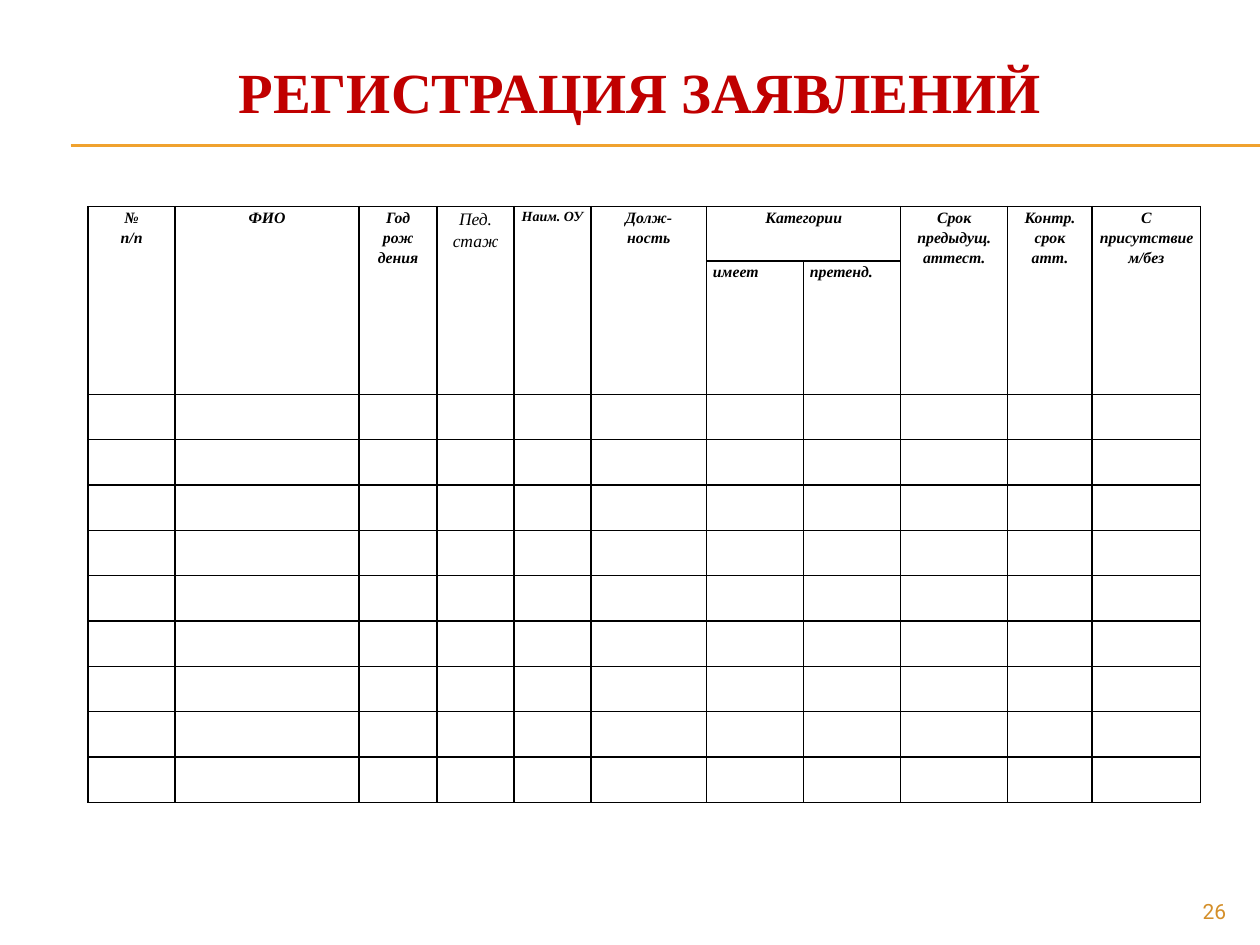
import pptx
import pptx.util
import pptx.dml.color
import pptx.enum.shapes
import pptx.enum.text
import pptx.oxml
import pptx.oxml.ns

Inches = pptx.util.Inches
Pt = pptx.util.Pt
RED = pptx.dml.color.RGBColor(0xC0, 0x00, 0x00)
GOLD = pptx.dml.color.RGBColor(0xF0, 0xA2, 0x2E)
DARK_GOLD = pptx.dml.color.RGBColor(0xD4, 0x8F, 0x29)
BLACK = pptx.dml.color.RGBColor(0, 0, 0)
ALIGN = pptx.enum.text.PP_ALIGN
ANCHOR = pptx.enum.text.MSO_ANCHOR

SERIF = "Times New Roman"
TITLE = "РЕГИСТРАЦИЯ ЗАЯВЛЕНИЙ"
PAGE_NUMBER = "26"
HEADERS = [
    "№\nп/п", "ФИО", "Год\nрож\nдения", "Пед.\nстаж", "Наим. ОУ", "Долж-\nность",
    "Категории", None, "Срок предыдущ. аттест.", "Контр.\nсрок\nатт.",
    "С присутствием/без",
]
SUBHEADERS = {6: "имеет", 7: "претенд."}
HEADER_FORMAT = {"name": SERIF, "size": Pt(9), "bold": True, "italic": True}
SPECIAL_FORMATS = {3: {"size": Pt(10), "bold": False}, 4: {"size": Pt(8)}}
COLUMN_WIDTHS = [0.69, 1.46, 0.62, 0.61, 0.61, 0.92, 0.77, 0.77, 0.85, 0.67, 0.86]
ROW_HEIGHTS = [0.43, 1.06] + [0.36] * 9
RULE_LEVELS = [1.15, 1.16]


def write(frame, text, color, font_format, paragraph_format):
    frame.text = text
    for paragraph in frame.paragraphs:
        for name, value in paragraph_format.items():
            setattr(paragraph, name, value)
        for run in paragraph.runs:
            run.font.color.rgb = color
            for name, value in font_format.items():
                setattr(run.font, name, value)


def add_text(slide, box, text, color, font_format, alignment, frame_format):
    frame = slide.shapes.add_textbox(*map(Inches, box)).text_frame
    for name, value in frame_format.items():
        setattr(frame, name, value)
    write(frame, text, color, font_format, {"alignment": alignment})


def add_rule(slide, level):
    line = slide.shapes.add_connector(
        pptx.enum.shapes.MSO_CONNECTOR.STRAIGHT,
        Inches(0.56), Inches(level), Inches(10), Inches(level))
    line.line.color.rgb = GOLD
    line.line.width = Pt(0.75)
    line._element.spPr.append(pptx.oxml.parse_xml(
        f"<a:effectLst {pptx.oxml.ns.nsdecls('a')}/>"))


def style_cell(cell):
    cell_format = {"margin_left": Inches(0.05), "margin_right": Inches(0.05),
                   "margin_top": 0, "margin_bottom": 0}
    for name, value in cell_format.items():
        setattr(cell, name, value)
    properties = cell._tc.get_or_add_tcPr()
    for side in ("lnL", "lnR", "lnT", "lnB"):
        properties.append(pptx.oxml.parse_xml(
            f"<a:{side} {pptx.oxml.ns.nsdecls('a')} w='{Pt(1)}'>"
            f"<a:solidFill><a:srgbClr val='{BLACK}'/></a:solidFill></a:{side}>"))
    cell.fill.background()


def add_register(slide):
    table = slide.shapes.add_table(
        len(ROW_HEIGHTS), len(COLUMN_WIDTHS), Inches(0.7), Inches(1.64),
        Inches(sum(COLUMN_WIDTHS)), Inches(sum(ROW_HEIGHTS))).table
    table.first_row = table.horz_banding = False
    for column, width in zip(table.columns, COLUMN_WIDTHS):
        column.width = Inches(width)
    for row, height in zip(table.rows, ROW_HEIGHTS):
        row.height = Inches(height)
    for cell in table.iter_cells():
        style_cell(cell)
    for index, header in enumerate(HEADERS):
        if header:
            cell = table.cell(0, index)
            end = (0, index + 1) if index in SUBHEADERS else (1, index)
            cell.merge(table.cell(*end))
            font_format = HEADER_FORMAT | SPECIAL_FORMATS.get(index, {})
            write(cell.text_frame, header, BLACK, font_format,
                  {"alignment": ALIGN.CENTER, "line_spacing": 1.15})
    for index, subheader in SUBHEADERS.items():
        write(table.cell(1, index).text_frame, subheader, BLACK, HEADER_FORMAT,
              {"alignment": ALIGN.LEFT, "line_spacing": 1.15})


def main():
    presentation = pptx.Presentation()
    presentation.slide_width = Inches(10)
    presentation.slide_height = Inches(7.5)
    slide = presentation.slides.add_slide(presentation.slide_layouts[6])
    for level in RULE_LEVELS:
        add_rule(slide, level)
    add_text(slide, (0.33, 0.45, 9.5, 0.92), TITLE, RED,
             {"name": SERIF, "size": Pt(32.4), "bold": True}, ALIGN.CENTER,
             {"word_wrap": True, "vertical_anchor": ANCHOR.TOP,
              "margin_top": 0, "margin_bottom": 0})
    add_text(slide, (9, 7.08, 0.83, 0.27), PAGE_NUMBER, DARK_GOLD,
             {"name": "Roboto", "size": Pt(12)}, ALIGN.RIGHT,
             {"word_wrap": True, "vertical_anchor": ANCHOR.TOP})
    add_register(slide)
    presentation.save("out.pptx")


if __name__ == "__main__":
    main()
